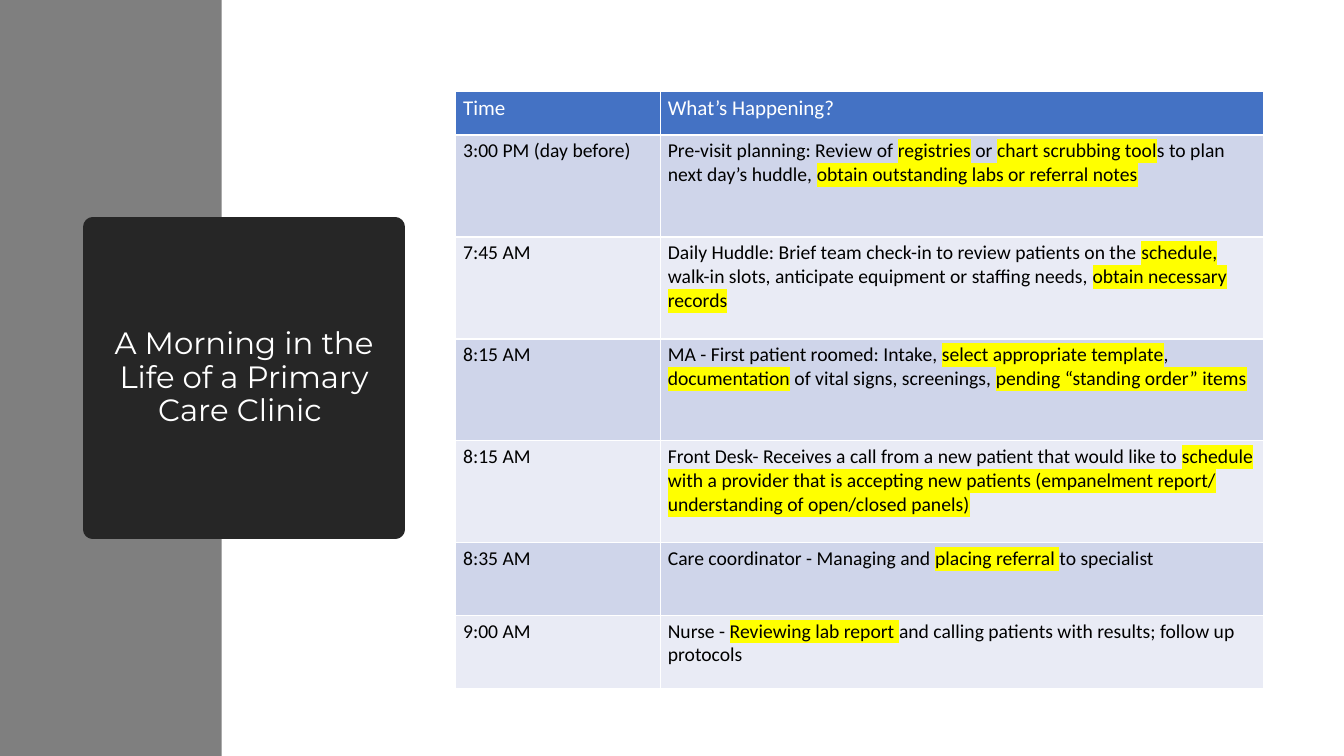
from lxml import etree
from pptx import Presentation
from pptx.dml import color
from pptx.enum import shapes, text
from pptx.oxml import ns
from pptx.util import Cm, Pt

HIGHLIGHT = "FFFF00"
COLUMN_WIDTHS = [5.16, 15.21]
ROW_HEIGHTS = [1.09] + [2.57] * 4 + [1.83] * 2
SCHEDULE = [
    ("Time", "What’s Happening?"),
    ("3:00 PM (day before)",
     "Pre-visit planning: Review of |registries| or |chart scrubbing tool|"
     "s to plan next day’s huddle, |obtain outstanding labs or referral notes"),
    ("7:45 AM",
     "Daily Huddle: Brief team check-in to review patients on the |schedule, |"
     "walk-in slots, anticipate equipment or staffing needs, |obtain necessary records"),
    ("8:15 AM",
     "MA - First patient roomed: Intake, |select appropriate template|, |documentation|"
     " of vital signs, screenings, |pending “standing order” items"),
    ("8:15 AM",
     "Front Desk- Receives a call from a new patient that would like to |"
     "schedule with a provider that is accepting new patients "
     "(empanelment report/ understanding of open/closed panels)"),
    ("8:35 AM",
     "Care coordinator - Managing and |placing referral |to specialist"),
    ("9:00 AM",
     "Nurse - |Reviewing lab report |and calling patients with results; follow up protocols"),
]


def rgb(value):
    return color.RGBColor.from_string(value)


def paint(fill, value):
    fill.solid()
    fill.fore_color.rgb = rgb(value)


def set_font(paragraph, name, size, value):
    font = paragraph.font
    font.name = name
    font.size = Pt(size)
    font.bold = False
    font.color.rgb = rgb(value)


def highlight(run):
    properties = run._r.get_or_add_rPr()
    mark = etree.SubElement(properties, ns.qn("a:highlight"))
    etree.SubElement(mark, ns.qn("a:srgbClr"), val=HIGHLIGHT)


def add_box(slide, left, top, width, height, value):
    shape = slide.shapes.add_shape(
        shapes.MSO_SHAPE.RECTANGLE, Cm(left), Cm(top), Cm(width), Cm(height))
    shape.shadow.inherit = False
    paint(shape.fill, value)
    shape.line.fill.background()
    return shape


def add_title(slide, title):
    shape = add_box(slide, 2.34, 5.72, 7.62, 7.62, "262626")
    paint(shape.line.fill, "262626")
    shape.line.width = Pt(13.75)
    etree.SubElement(shape.line._get_or_add_ln(), ns.qn("a:round"))
    frame = shape.text_frame
    frame.word_wrap = True
    frame.vertical_anchor = text.MSO_ANCHOR.MIDDLE
    paragraph = frame.paragraphs[0]
    paragraph.alignment = text.PP_ALIGN.CENTER
    paragraph.line_spacing = 0.9
    paragraph.add_run().text = title
    set_font(paragraph, "Montserrat", 22, "FFFFFF")


def fill_cell(cell, content, size, text_color, background):
    paint(cell.fill, background)
    cell.margin_left = cell.margin_right = Cm(0.19)
    cell.margin_top = cell.margin_bottom = Cm(0.1)
    paragraph = cell.text_frame.paragraphs[0]
    set_font(paragraph, "Calibri", size, text_color)
    for index, part in enumerate(content.split("|")):
        run = paragraph.add_run()
        run.text = part
        if index % 2:
            highlight(run)


def add_schedule(slide):
    table = slide.shapes.add_table(
        len(ROW_HEIGHTS), len(COLUMN_WIDTHS), Cm(11.48), Cm(2.31),
        Cm(sum(COLUMN_WIDTHS)), Cm(sum(ROW_HEIGHTS))).table
    table.horz_banding = False
    for column, width in zip(table.columns, COLUMN_WIDTHS):
        column.width = Cm(width)
    for index, (row, height) in enumerate(zip(table.rows, ROW_HEIGHTS)):
        row.height = Cm(height)
        if index == 0:
            style = 15, "FFFFFF", "4472C4"
        else:
            style = 14, "000000", "CFD5EA" if index % 2 else "E9EBF5"
        for cell, content in zip(row.cells, SCHEDULE[index]):
            fill_cell(cell, content, *style)


def main():
    presentation = Presentation()
    presentation.slide_width = Cm(33.87)
    presentation.slide_height = Cm(19.05)
    slide = presentation.slides.add_slide(presentation.slide_layouts[6])
    add_box(slide, 0, 0, 5.59, 19.05, "7F7F7F")
    add_title(slide, "A Morning in the Life of a Primary Care Clinic ")
    add_schedule(slide)
    presentation.save("out.pptx")


if __name__ == "__main__":
    main()
